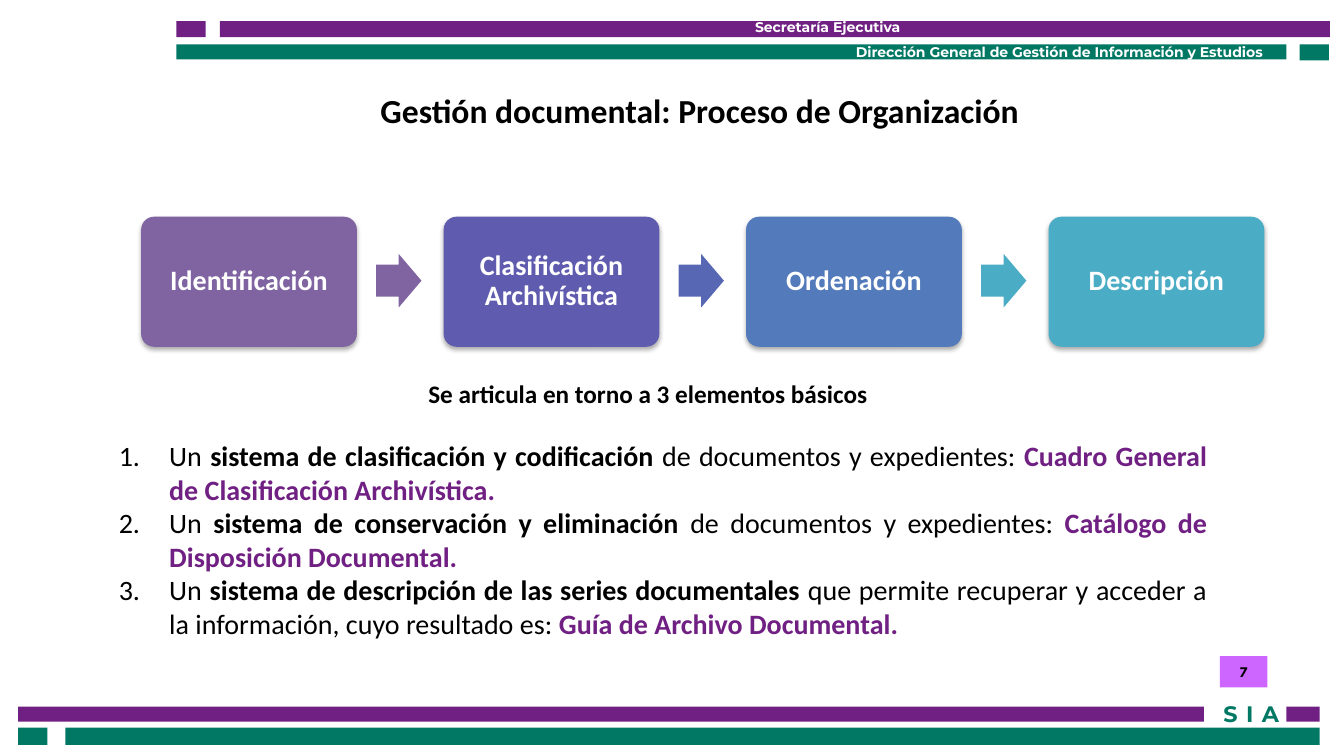
from dataclasses import dataclass

import pptx
import pptx.dml.color
import pptx.enum.shapes
import pptx.enum.text
import pptx.oxml
import pptx.oxml.ns
import pptx.util

Inches = pptx.util.Inches
Pt = pptx.util.Pt
Shape = pptx.enum.shapes.MSO_SHAPE
Align = pptx.enum.text.PP_ALIGN
Anchor = pptx.enum.text.MSO_ANCHOR


@dataclass(frozen=True)
class Theme:
    purple: str = "702082"
    green: str = "007864"
    white: str = "FFFFFF"
    black: str = "000000"
    badge: str = "CC66FF"
    steps: tuple = ("8064A2", "5F5BAE", "537ABA", "4BACC6")
    arrows: tuple = ("8064A2", "5767B4", "4BACC6")
    body_font: str = "Calibri"
    brand_font: str = "Montserrat"
    number_font: str = "League Spartan"
    title: float = 24
    body: float = 20
    lead: float = 18
    acronym: float = 16
    header: float = 10
    number: float = 10.5


THEME = Theme()

BARS = [
    (12.76, 7.01, 0.33, 0.15, THEME.purple),
    (0.18, 7.01, 11.76, 0.15, THEME.purple),
    (0.18, 7.22, 0.29, 0.17, THEME.green),
    (0.65, 7.22, 12.44, 0.17, THEME.green),
    (1.75, 0.21, 0.29, 0.16, THEME.purple),
    (2.18, 0.21, 11.01, 0.16, THEME.purple),
    (12.89, 0.44, 0.29, 0.16, THEME.green),
    (1.75, 0.44, 11.01, 0.15, THEME.green),
]

STEPS = ["Identificación", "Clasificación Archivística", "Ordenación", "Descripción"]

ELEMENTS = [
    ("sistema de clasificación y codificación ", "de documentos y expedientes: ",
     "Cuadro General de Clasificación Archivística."),
    ("sistema de conservación y eliminación ", "de documentos y expedientes: ",
     "Catálogo de Disposición Documental."),
    ("sistema de descripción de las series documentales ",
     "que permite recuperar y acceder a la información, cuyo resultado es: ",
     "Guía de Archivo Documental."),
]


def rgb(color):
    return pptx.dml.color.RGBColor.from_string(color)


def style(font, size, color, bold=True, name=THEME.body_font):
    font.size = Pt(size)
    font.name = name
    font.bold = bold
    font.color.rgb = rgb(color)


def add_block(slide, kind, left, top, width, height, color):
    block = slide.shapes.add_shape(
        kind, Inches(left), Inches(top), Inches(width), Inches(height))
    block.shadow.inherit = False
    block.fill.solid()
    block.fill.fore_color.rgb = rgb(color)
    block.line.fill.background()
    return block


def write(frame, text, size, color, name=THEME.body_font, align=Align.CENTER):
    frame.text = text
    paragraph = frame.paragraphs[0]
    paragraph.alignment = align
    run = paragraph.runs[0]
    style(run.font, size, color, name=name)
    return run


def add_label(slide, left, top, width, height, *text, wrap=True, **options):
    label = slide.shapes.add_textbox(
        Inches(left), Inches(top), Inches(width), Inches(height))
    label.text_frame.word_wrap = wrap
    return write(label.text_frame, *text, **options)


def add_soft_shadow(block):
    effects = block._element.spPr.find(pptx.oxml.ns.qn("a:effectLst"))
    effects.append(pptx.oxml.parse_xml(
        f'<a:outerShdw {pptx.oxml.ns.nsdecls("a")} blurRad="{Pt(3.5)}" '
        f'dist="{Pt(2.2)}" dir="5400000" rotWithShape="0">'
        f'<a:srgbClr val="{THEME.black}"><a:alpha val="32000"/></a:srgbClr>'
        '</a:outerShdw>'))


def add_step(slide, left, text, color):
    step = add_block(slide, Shape.ROUNDED_RECTANGLE, left, 2.15, 2.14, 1.29, color)
    step.adjustments[0] = 0.1
    add_soft_shadow(step)
    frame = step.text_frame
    frame.word_wrap = True
    frame.vertical_anchor = Anchor.MIDDLE
    write(frame, text, THEME.body, THEME.white)
    frame.paragraphs[0].line_spacing = 0.9


def add_process(slide):
    left, pitch = 1.4, 3.0
    for index, (text, color) in enumerate(zip(STEPS, THEME.steps)):
        add_step(slide, left + index * pitch, text, color)
    for index, color in enumerate(THEME.arrows):
        arrow = add_block(slide, Shape.RIGHT_ARROW,
                          left + 2.33 + index * pitch, 2.52, 0.45, 0.53, color)
        arrow.adjustments[0] = 0.6
        arrow.adjustments[1] = 0.5


def number_paragraph(paragraph):
    properties = paragraph._p.get_or_add_pPr()
    properties.set("marL", str(Inches(0.5)))
    properties.set("indent", str(-Inches(0.5)))
    properties.append(pptx.oxml.parse_xml(
        f'<a:buFont {pptx.oxml.ns.nsdecls("a")} typeface="+mj-lt"/>'))
    properties.append(pptx.oxml.parse_xml(
        f'<a:buAutoNum {pptx.oxml.ns.nsdecls("a")} type="arabicPeriod"/>'))


def add_elements(slide):
    box = slide.shapes.add_textbox(
        Inches(1.08), Inches(4.3), Inches(10.99), Inches(2.52))
    frame = box.text_frame
    frame.word_wrap = True
    for index, (system, detail, result) in enumerate(ELEMENTS):
        paragraph = frame.add_paragraph() if index else frame.paragraphs[0]
        paragraph.alignment = Align.JUSTIFY
        number_paragraph(paragraph)
        for text, color, bold in (("Un ", THEME.black, False),
                                  (system, THEME.black, True),
                                  (detail, THEME.black, False),
                                  (result, THEME.purple, True)):
            run = paragraph.add_run()
            run.text = text
            style(run.font, THEME.body, color, bold)


def add_header_and_footer(slide):
    for *place, color in BARS:
        add_block(slide, Shape.RECTANGLE, *place, color)
    acronym = add_label(slide, 11.78, 6.9, 1.26, 0.37, "SIA", THEME.acronym,
                        THEME.green, name=THEME.brand_font)
    acronym.font._element.set("spc", "600")
    for left, top, width, text in (
            (7.39, 0.13, 2.2, "Secretaría Ejecutiva"),
            (8.39, 0.38, 4.6, "Dirección General de Gestión de Información y Estudios")):
        add_label(slide, left, top, width, 0.27, text, THEME.header, THEME.white,
                  name=THEME.brand_font, align=Align.LEFT, wrap=False)


def add_page_number(slide):
    badge = add_block(slide, Shape.RECTANGLE, 12.1, 6.51, 0.47, 0.31, THEME.badge)
    badge.text_frame.vertical_anchor = Anchor.MIDDLE
    write(badge.text_frame, "7", THEME.number, THEME.black, name=THEME.number_font)


def main():
    deck = pptx.Presentation()
    deck.slide_width = Inches(13.33)
    deck.slide_height = Inches(7.5)
    slide = deck.slides.add_slide(deck.slide_layouts[6])
    add_header_and_footer(slide)
    add_label(slide, 2.65, 0.84, 8.58, 0.94,
              "Gestión documental: Proceso de Organización", THEME.title, THEME.black)
    add_process(slide)
    add_elements(slide)
    add_label(slide, 4.15, 3.7, 4.59, 0.4, "Se articula en torno a 3 elementos básicos",
              THEME.lead, THEME.black, align=Align.LEFT, wrap=False)
    add_page_number(slide)
    deck.save("out.pptx")


if __name__ == "__main__":
    main()
